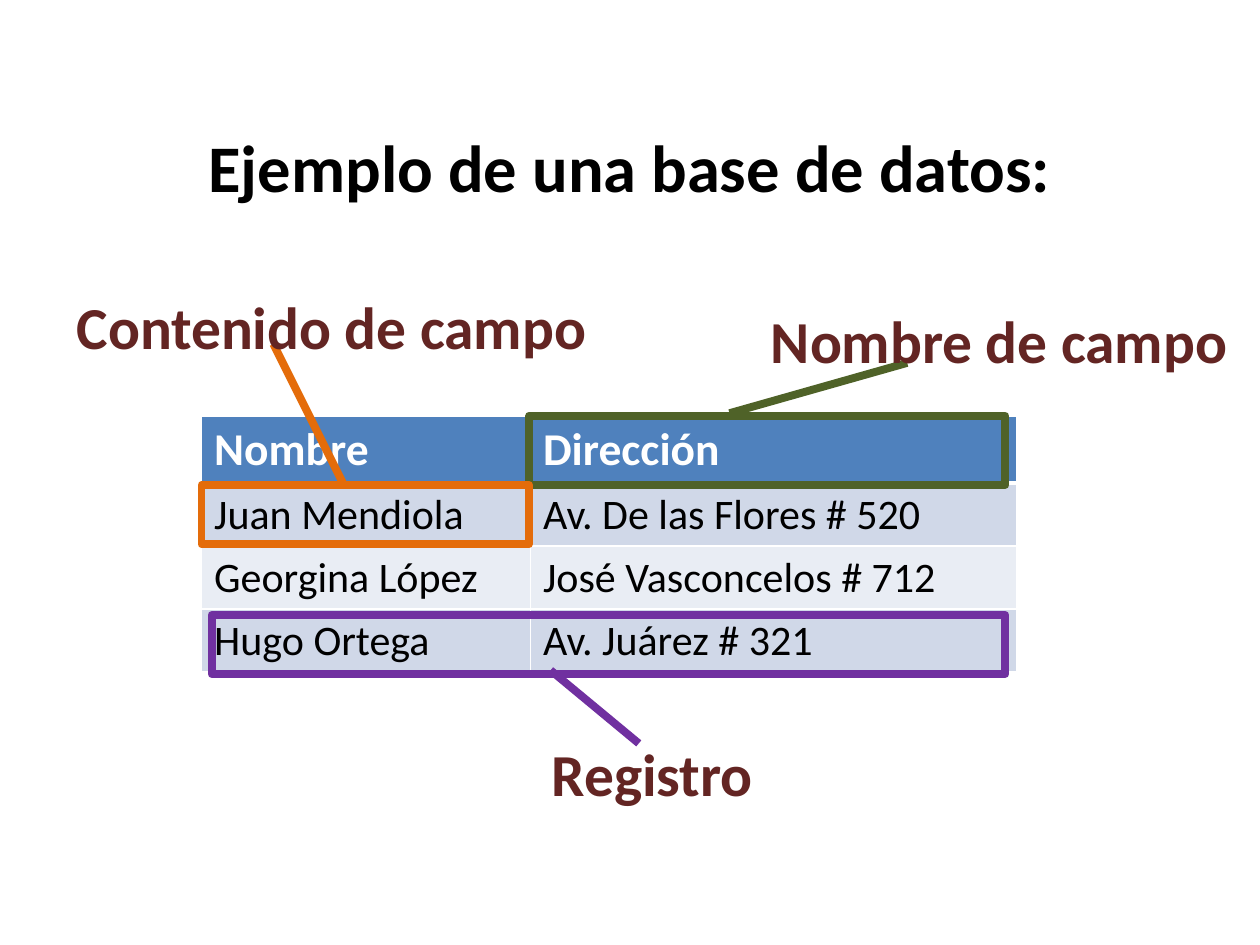
from lxml.etree import SubElement
from pptx import Presentation
from pptx.dml.color import RGBColor
from pptx.enum.shapes import MSO_CONNECTOR, MSO_SHAPE
from pptx.enum.text import MSO_ANCHOR, MSO_AUTO_SIZE, PP_ALIGN
from pptx.oxml.ns import qn
from pptx.util import Inches, Pt

THEME = {
    "font": "Calibri",
    "size": {"title": 38, "label": 34, "header": 26, "cell": 24},
    "line": 4.5,
    "black": "000000", "white": "FFFFFF", "label": "632523",
    "header": "4F81BD", "bands": ("D0D8E8", "E9EDF4"),
    "field": "4F6228", "content": "E46C0A", "record": "7030A0",
}
SLIDE = (10, 7.5)

# Places are percentages of the slide: left, top, width, height.
TITLE = ("Ejemplo de una base de datos:", (5, 9.2, 90, 16.67))
TABLE_PLACE = (16, 44, 64.7, 27.07)
COLUMNS = (26.1, 38.6)
ROW_MINIMUM = 5.47
ROWS = [
    ("Nombre", "Dirección"),
    ("Juan Mendiola", "Av. De las Flores # 520"),
    ("Georgina López", "José Vasconcelos # 712"),
    ("Hugo Ortega", "Av. Juárez # 321"),
]
# Each callout: text, colour name, label place, frame place, pointer ends.
CALLOUTS = [
    ("Nombre de campo", "field", (60.2, 31.47, 38.6, 8.93),
     (42, 44, 37.8, 7.33), (57.9, 43.73, 72, 38.4)),
    ("Contenido de campo", "content", (5.1, 30, 42.9, 8.93),
     (16, 51.33, 26, 6.27), (27.2, 51.07, 21.7, 36.4)),
    ("Registro", "record", (42.8, 77.33, 18.2, 8.93),
     (16.8, 65.07, 63, 6.27), (43.7, 70.93, 50.7, 78.67)),
]


def across(share):
    return Inches(SLIDE[0] * share / 100)


def down(share):
    return Inches(SLIDE[1] * share / 100)


def place(shares):
    """Turn alternating x and y shares into lengths."""
    return [(across, down)[i % 2](share) for i, share in enumerate(shares)]


def color(name):
    return RGBColor.from_string(THEME.get(name, name))


def write(frame, text, size, ink, bold=True):
    para = frame.paragraphs[0]
    span = para.add_run()
    span.text = text
    span.font.name = THEME["font"]
    span.font.size = Pt(THEME["size"][size])
    span.font.bold = bold
    span.font.color.rgb = color(ink)
    return para


def add_title(page):
    text, shares = TITLE
    frame = page.shapes.add_textbox(*place(shares)).text_frame
    frame.word_wrap = True
    frame.vertical_anchor = MSO_ANCHOR.MIDDLE
    write(frame, text, "title", "black").alignment = PP_ALIGN.CENTER


def set_borders(cell, bottom):
    properties = cell._tc.get_or_add_tcPr()
    for index, (side, width) in enumerate(
            (("L", 1), ("R", 1), ("T", 1), ("B", bottom))):
        border = properties.makeelement(qn(f"a:ln{side}"), {"w": str(Pt(width))})
        fill = SubElement(border, qn("a:solidFill"))
        SubElement(fill, qn("a:srgbClr"), val=THEME["white"])
        properties.insert(index, border)


def add_table(page):
    holder = page.shapes.add_table(len(ROWS), len(COLUMNS), *place(TABLE_PLACE))
    table = holder.table
    for column, share in zip(table.columns, COLUMNS):
        column.width = across(share)
    for r, texts in enumerate(ROWS):
        header = r == 0
        table.rows[r].height = down(ROW_MINIMUM)
        for c, text in enumerate(texts):
            cell = table.cell(r, c)
            cell.fill.solid()
            cell.fill.fore_color.rgb = color(
                "header" if header else THEME["bands"][(r - 1) % 2])
            set_borders(cell, 3 if header else 1)
            write(cell.text_frame, text, "header" if header else "cell",
                  "white" if header else "black", header)
    holder.height = down(TABLE_PLACE[3])


def add_callout(page, text, ink, label_place, frame_place, pointer_ends):
    outline = page.shapes.add_shape(MSO_SHAPE.RECTANGLE, *place(frame_place))
    outline.shadow.inherit = False
    outline.fill.background()
    pointer = page.shapes.add_connector(
        MSO_CONNECTOR.STRAIGHT, *place(pointer_ends))
    for item in (outline, pointer):
        item.line.color.rgb = color(ink)
        item.line.width = Pt(THEME["line"])
    SubElement(pointer._element.spPr, qn("a:effectLst"))

    box = page.shapes.add_textbox(*place(label_place))
    box.text_frame.word_wrap = False
    box.text_frame.auto_size = MSO_AUTO_SIZE.SHAPE_TO_FIT_TEXT
    write(box.text_frame, text, "label", "label")


def main():
    deck = Presentation()
    deck.slide_width, deck.slide_height = map(Inches, SLIDE)
    page = deck.slides.add_slide(deck.slide_layouts[6])
    add_title(page)
    add_table(page)
    for callout in CALLOUTS:
        add_callout(page, *callout)
    deck.save("out.pptx")


if __name__ == "__main__":
    main()
